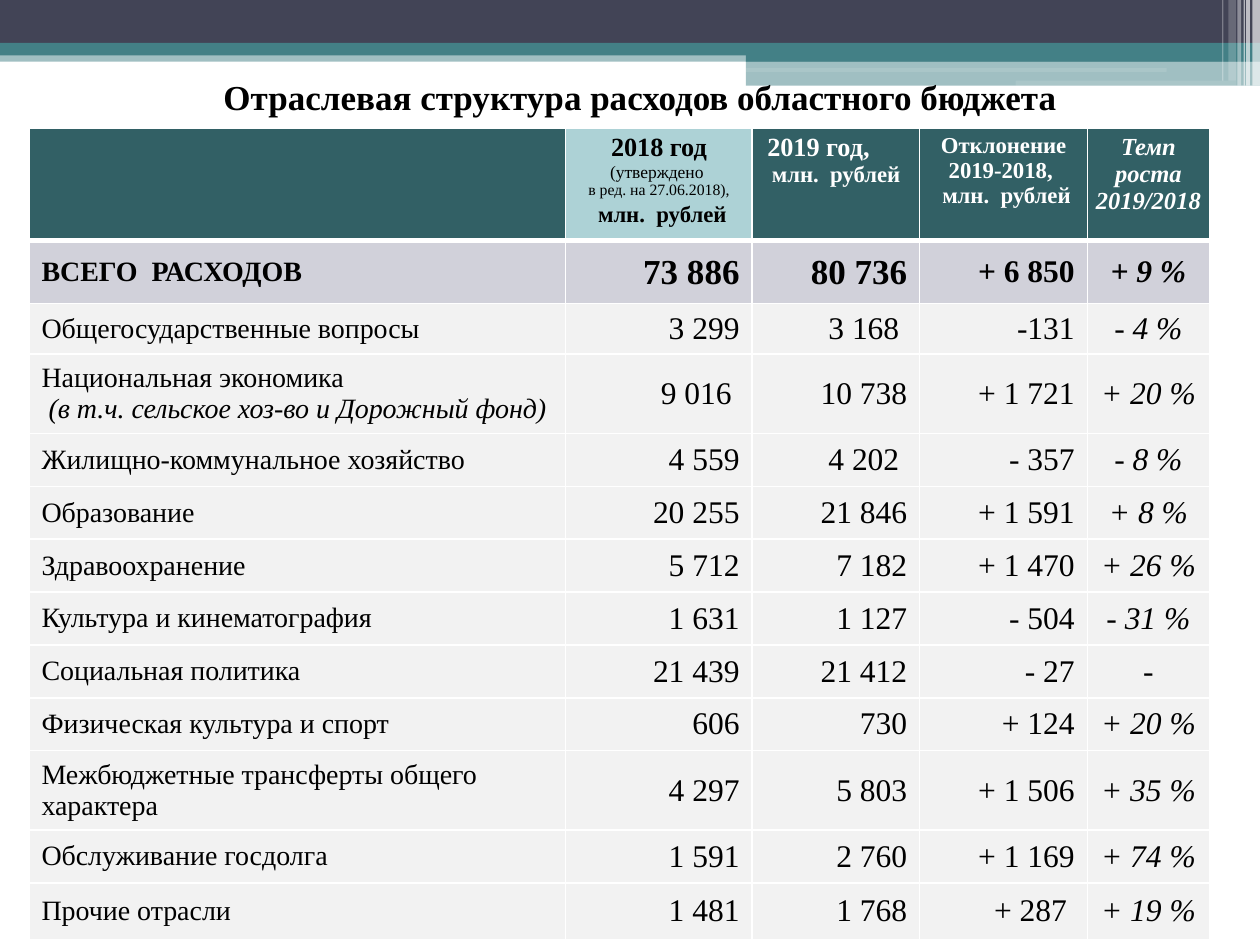
from lxml import etree
from pptx import Presentation
from pptx.dml.color import RGBColor
from pptx.enum.shapes import MSO_SHAPE
from pptx.enum.text import MSO_ANCHOR, PP_ALIGN
from pptx.oxml.ns import qn
from pptx.util import Inches, Pt

RECT, ROUND = MSO_SHAPE.RECTANGLE, MSO_SHAPE.ROUNDED_RECTANGLE
LEFT, MID, RIGHT = PP_ALIGN.LEFT, PP_ALIGN.CENTER, PP_ALIGN.RIGHT
TOP, CENTER = MSO_ANCHOR.TOP, MSO_ANCHOR.MIDDLE
FONT = "Times New Roman"
BLACK, WHITE, TEAL, NAVY = "000000", "FFFFFF", "438086", "424456"
DARK, PALE, LILAC, GREY = "326065", "ADD2D6", "D1D1DA", "F2F2F2"

TITLE = "Отраслевая структура расходов областного бюджета"
BANDS = [
    (RECT, 0, 0.4, 10, 0.09, TEAL, 50),
    (RECT, 0, 0, 10, 0.34, NAVY, 100),
    (RECT, 0, 0.34, 10, 0.1, TEAL, 100),
    (RECT, 5.92, 0.39, 4.08, 0.1, TEAL, 100),
    (RECT, 5.92, 0.48, 4.08, 0.2, TEAL, 50),
    (ROUND, 5.91, 0.54, 3.35, 0.03, WHITE, 11),
    (ROUND, 8.06, 0.64, 1.75, 0.04, WHITE, 11),
    (RECT, 9.94, 0, 0.06, 0.68, WHITE, 65),
    (RECT, 9.89, 0, 0.03, 0.68, WHITE, 65),
    (RECT, 9.87, 0, 0.01, 0.68, WHITE, 60),
    (RECT, 9.82, 0, 0.03, 0.68, WHITE, 40),
    (RECT, 9.75, 0, 0.06, 0.64, WHITE, 20),
    (RECT, 9.7, 0, 0.01, 0.64, WHITE, 30),
]
COLS = [4.26, 1.48, 1.33, 1.33, 0.97]
ROWS = [0.89, 0.5, 0.4, 0.63] + [0.42] * 6 + [0.63, 0.42, 0.45]
HEADS = [
    (DARK, WHITE, []),
    (PALE, BLACK, [
        (MID, 0, [("2018 год ", 15, "b"), ("(утверждено ", 10, "")]),
        (MID, 0, [("в ред. на 27.06.2018),", 9, "")]),
        (MID, 0, [(" ", 15, ""), ("млн.  рублей", 13, "b")])]),
    (DARK, WHITE, [
        (LEFT, 0.1, [("2019 год,", 15, "b")]),
        (MID, 0, [("млн.  рублей", 13, "b")])]),
    (DARK, WHITE, [
        (MID, 0, [("Отклонение 2019-2018, ", 13, "b")]),
        (MID, 0, [(" млн.  рублей", 13, "b")])]),
    (DARK, WHITE, [(MID, 0, [("Темп роста 2019/2018", 14, "bi")])]),
]
DATA = [
    ("ВСЕГО  РАСХОДОВ", "73 886", "80 736", "+ 6 850", "+ 9 %"),
    ("Общегосударственные вопросы", "3 299", "3 168 ", "-131", "- 4 %"),
    ("Национальная экономика", "9 016 ", "10 738", "+ 1 721", "+ 20 %"),
    ("Жилищно-коммунальное хозяйство", "4 559", "4 202 ", "- 357", "- 8 %"),
    ("Образование", "20 255", "21 846", "+ 1 591", "+ 8 %"),
    ("Здравоохранение", "5 712", "7 182", "+ 1 470", "+ 26 %"),
    ("Культура и кинематография", "1 631", "1 127", "- 504", "- 31 %"),
    ("Социальная политика", "21 439", "21 412", "- 27", "-"),
    ("Физическая культура и спорт", "606", "730", "+ 124", "+ 20 %"),
    ("Межбюджетные трансферты общего характера",
     "4 297", "5 803", "+ 1 506", "+ 35 %"),
    ("Обслуживание госдолга", "1 591", "2 760", "+ 1 169", "+ 74 %"),
    ("Прочие отрасли", "1 481", "1 768", "+ 287 ", "+ 19 %"),
]
NOTES = {"Национальная экономика": " (в т.ч. сельское хоз-во и Дорожный фонд)"}
SIDES = [MID if n == 4 else RIGHT if n else LEFT for n in range(5)]


def paint(fill, color, alpha=100):
    fill.solid()
    fill.fore_color.rgb = RGBColor.from_string(color)
    if alpha < 100:
        tint = fill._xPr.find(".//" + qn("a:srgbClr"))
        etree.SubElement(tint, qn("a:alpha"), val=str(alpha * 1000))


def write(frame, paras, color):
    for n, (side, dent, runs) in enumerate(paras):
        para = frame.paragraphs[0] if n == 0 else frame.add_paragraph()
        para.alignment = side
        if dent:
            para._p.get_or_add_pPr().set("marL", str(Inches(dent)))
        for text, size, style in runs:
            run = para.add_run()
            run.text = text
            font = run.font
            font.name, font.size = FONT, Pt(size)
            font.bold, font.italic = "b" in style, "i" in style
            font.color.rgb = RGBColor.from_string(color)


def edge(cell, row):
    props = cell._tc.get_or_add_tcPr()
    wide = {"T": 3 if row == 1 else 1, "B": 3 if row == 0 else 1}
    for n, side in enumerate("LRTB"):
        line = etree.Element(qn("a:ln" + side), w=str(Pt(wide.get(side, 1))))
        fill = etree.SubElement(line, qn("a:solidFill"))
        etree.SubElement(fill, qn("a:srgbClr"), val=WHITE)
        props.insert(n, line)


def fill_cell(cell, row, back, ink, paras):
    head = row == 0
    cell.margin_left = cell.margin_right = Inches(0.02 if head else 0.1)
    cell.margin_top = cell.margin_bottom = Inches(0.04 if head else 0.05)
    cell.vertical_anchor = TOP if head else CENTER
    paint(cell.fill, back)
    edge(cell, row)
    write(cell.text_frame, paras, ink)


def body(row, col, text):
    total = row == 1
    size = 16 if col == 0 else 20 if total and col < 3 else 18
    style = ("b" if total else "") + ("i" if col == 4 else "")
    paras = [(SIDES[col], 0, [(text, size, style)])]
    if text in NOTES:
        paras.append((LEFT, 0, [(NOTES[text], size, "i")]))
    return LILAC if total else GREY, BLACK, paras


def main():
    deck = Presentation()
    deck.slide_width, deck.slide_height = Inches(10), Inches(7.5)
    slide = deck.slides.add_slide(deck.slide_layouts[5])
    shapes = slide.shapes

    for kind, x, y, w, h, color, alpha in BANDS:
        band = shapes.add_shape(kind, *map(Inches, (x, y, w, h)))
        band.shadow.inherit = False
        band.line.fill.background()
        paint(band.fill, color, alpha)

    title = shapes.title
    title.left, title.top = Inches(0), Inches(0.55)
    title.width, title.height = Inches(10.16), Inches(0.44)
    title.text_frame.word_wrap = True
    title.text_frame.vertical_anchor = TOP
    write(title.text_frame, [(MID, 0, [(TITLE, 20, "b")])], BLACK)
    shapes._spTree.append(title._element)

    area = map(Inches, (0.23, 1.02, sum(COLS), sum(ROWS)))
    table = shapes.add_table(len(ROWS), len(COLS), *area).table
    for col, width in zip(table.columns, COLS):
        col.width = Inches(width)
    for row, height in zip(table.rows, ROWS):
        row.height = Inches(height)
    for c, head in enumerate(HEADS):
        fill_cell(table.cell(0, c), 0, *head)
    for r, line in enumerate(DATA, 1):
        for c, text in enumerate(line):
            fill_cell(table.cell(r, c), r, *body(r, c, text))

    deck.save("out.pptx")


if __name__ == "__main__":
    main()
